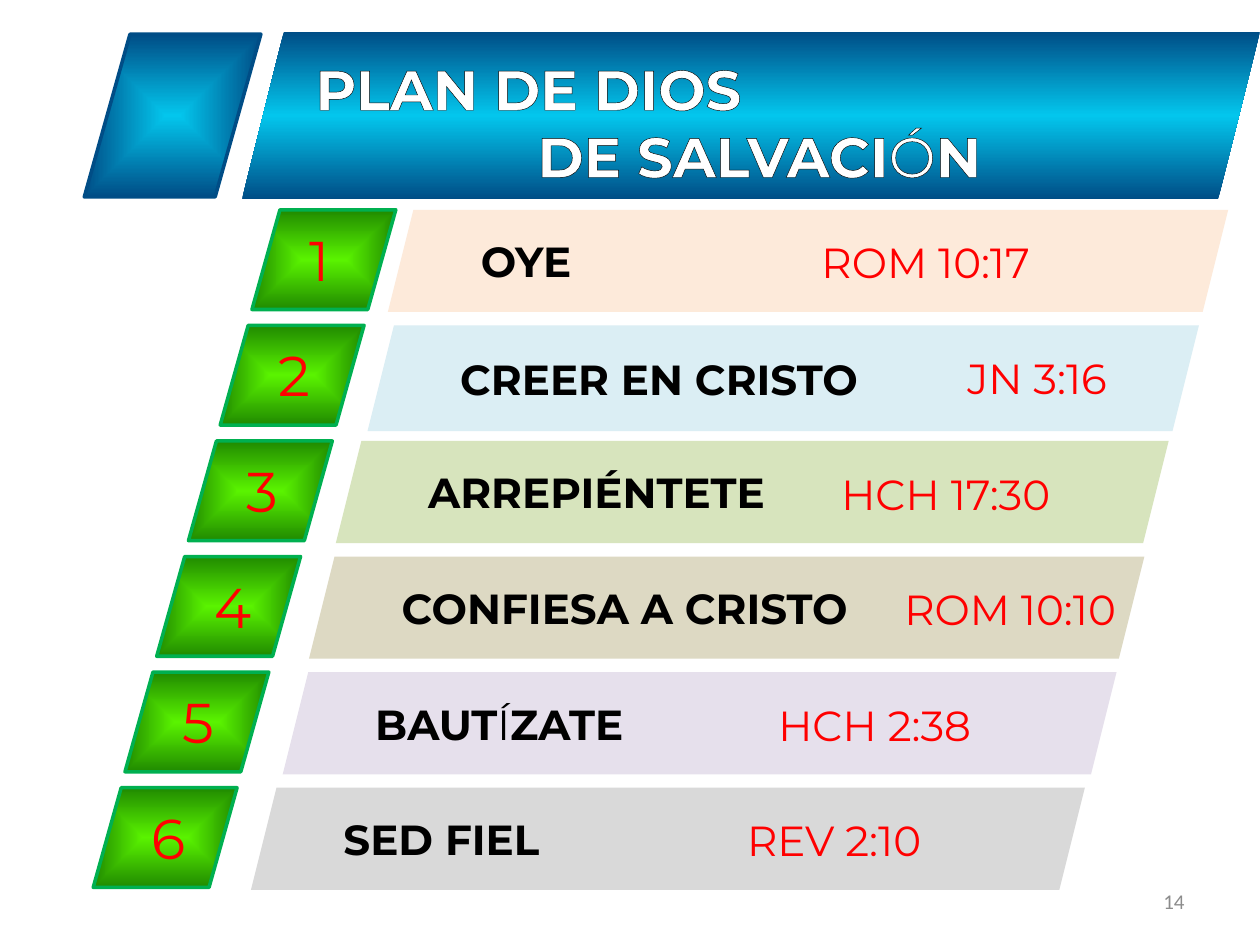
from pptx import Presentation
from pptx.dml.color import RGBColor
from pptx.enum.shapes import MSO_SHAPE
from pptx.enum.text import MSO_ANCHOR, MSO_AUTO_SIZE, PP_ALIGN
from pptx.oxml import parse_xml
from pptx.oxml.ns import nsdecls, qn
from pptx.util import Cm, Pt

PARALLELOGRAM = MSO_SHAPE.PARALLELOGRAM
MIDDLE = MSO_ANCHOR.MIDDLE
GROW = MSO_AUTO_SIZE.SHAPE_TO_FIT_TEXT
LEFT, CENTER, RIGHT = PP_ALIGN.LEFT, PP_ALIGN.CENTER, PP_ALIGN.RIGHT

WHITE = RGBColor(0xFF, 0xFF, 0xFF)
BLACK = RGBColor(0x00, 0x00, 0x00)
RED = RGBColor(0xFF, 0x00, 0x00)
GRAY = RGBColor(0x8C, 0x8C, 0x8C)
SKY = RGBColor(0x03, 0xC6, 0xED)
NAVY = RGBColor(0x00, 0x4D, 0x86)
LIME = RGBColor(0x5A, 0xF3, 0x00)
FOREST = RGBColor(0x20, 0x8A, 0x00)
GREEN = RGBColor(0x00, 0xB0, 0x50)
PEACH = RGBColor(0xFD, 0xEA, 0xDA)
ICE = RGBColor(0xDB, 0xEE, 0xF4)
SAGE = RGBColor(0xD7, 0xE4, 0xBD)
SAND = RGBColor(0xDD, 0xD9, 0xC3)
LILAC = RGBColor(0xE6, 0xE0, 0xEC)
SILVER = RGBColor(0xD9, 0xD9, 0xD9)

FONT = "Montserrat"
CENTER_PATH = ('<a:path path="shape"><a:fillToRect l="50000" t="50000" '
               'r="50000" b="50000"/></a:path>')
VERTICAL = '<a:lin ang="16200000" scaled="0"/>'

# Each step: label spans, bar offset, bar width, bar height, bar colour,
# reference, reference left, reference width.
STEPS = [
    ([("OYE", True)], 2.74, 16.94, 2.06, PEACH, "ROM 10:17", 16.31, 7.19),
    ([("CREER EN CRISTO", True)], 2.97, 16.76, 2.13, ICE, "JN 3:16", 19.25, 4.24),
    ([("ARREPIÉNTETE", True)], 2.97, 16.79, 2.06, SAGE, "HCH 17:30", 16.71, 6.35),
    ([("CONFIESA A CRISTO", True)], 3.07, 16.84, 2.06, SAND, "ROM 10:10", 17.98, 6.35),
    ([("BAUT", True), ("Í", False), ("ZATE", True)], 3.18, 16.81, 2.06, LILAC,
     "HCH 2:38", 15.44, 5.08),
    ([("SED FIEL", True)], 3.18, 16.81, 2.06, SILVER, "REV 2:10", 14.81, 5.28),
]


def write_spans(para, spans, size, color, font=FONT, align=LEFT):
    """Fill a paragraph with (text, bold) spans."""
    para.alignment = align
    for text, bold in spans:
        span = para.add_run()
        span.text = text
        span.font.name = font
        span.font.size = Pt(size)
        span.font.bold = bold
        span.font.color.rgb = color


def add_text(page, left, top, width, height):
    """Add a wrapping text box that grows with its text."""
    box = page.shapes.add_textbox(Cm(left), Cm(top), Cm(width), Cm(height))
    box.text_frame.word_wrap = True
    box.text_frame.auto_size = GROW
    return box


def add_slanted(page, left, top, width, height, fill, line=None):
    """Add a flat parallelogram, outlined if a line colour is given."""
    shape = page.shapes.add_shape(PARALLELOGRAM, Cm(left), Cm(top), Cm(width), Cm(height))
    shape.shadow.inherit = False
    shape.fill.solid()
    shape.fill.fore_color.rgb = fill
    if line is None:
        shape.line.fill.background()
    else:
        shape.line.color.rgb = line
        shape.line.width = Pt(2)
        shape.adjustments[0] = 0.281
    return shape


def set_gradient(shape, colors, direction):
    """Replace the solid fill with evenly spaced gradient stops."""
    last = len(colors) - 1
    stops = "".join(
        f'<a:gs pos="{100000 * i // last}"><a:srgbClr val="{color}"/></a:gs>'
        for i, color in enumerate(colors))
    gradient = parse_xml(f'<a:gradFill {nsdecls("a")} rotWithShape="1">'
                         f'<a:gsLst>{stops}</a:gsLst>{direction}</a:gradFill>')
    properties = shape.element.spPr
    properties.replace(properties.find(qn("a:solidFill")), gradient)


def outline_spans(para):
    """Give every span of the paragraph a thin black outline."""
    for span in para.runs:
        span.font._element.insert(0, parse_xml(
            f'<a:ln {nsdecls("a")} w="9525"><a:solidFill>'
            f'<a:srgbClr val="{BLACK}"/></a:solidFill></a:ln>'))


def add_header(page, left, top):
    """Draw the blue tile, the banner and the two-line title."""
    tile = add_slanted(page, left, top + 0.05, 3.56, 3.28, SKY, NAVY)
    set_gradient(tile, [SKY, NAVY], CENTER_PATH)
    banner = add_slanted(page, left + 3.18, top, 20.52, 3.38, SKY)
    set_gradient(banner, [NAVY, SKY, NAVY], VERTICAL)
    box = add_text(page, left + 3.51, top + 0.33, 20.19, 3.68)
    first = box.text_frame.paragraphs[0]
    second = box.text_frame.add_paragraph()
    write_spans(first, [("PLAN DE DIOS", True)], 32, WHITE)
    first._p.get_or_add_pPr().set("marL", str(Cm(0.9)))
    write_spans(second, [("DE SALVACI", True), ("Ó", False), ("N", True)],
                32, WHITE, align=CENTER)
    for para in (first, second):
        outline_spans(para)


def add_step(page, left, top, number, step):
    """Draw one numbered tile, its bar and its scripture reference."""
    label, offset, width, height, color, reference, reference_left, reference_width = step
    tile = add_slanted(page, left, top, 2.9, 2.01, LIME, GREEN)
    set_gradient(tile, [LIME, FOREST], CENTER_PATH)
    digit = add_text(page, left + 0.92, top + 0.19, 1.09, 1.62)
    write_spans(digit.text_frame.paragraphs[0], [(str(number), False)], 32, RED)
    bar = add_slanted(page, left + offset, top, width, height, color)
    bar.text_frame.vertical_anchor = MIDDLE
    write_spans(bar.text_frame.paragraphs[0], label, 24, BLACK)
    box = add_text(page, reference_left, top + 0.42, reference_width, 1.27)
    write_spans(box.text_frame.paragraphs[0], [(reference, False)], 24, RED)


def add_page_number(page, left, top):
    """Write the page number at the lower right."""
    box = page.shapes.add_textbox(Cm(left), Cm(top), Cm(5.92), Cm(1.02))
    box.text_frame.word_wrap = True
    box.text_frame.vertical_anchor = MIDDLE
    write_spans(box.text_frame.paragraphs[0], [("14", False)], 12, GRAY, "Calibri", RIGHT)


def main():
    """Build the deck and save it."""
    deck = Presentation()
    deck.slide_width, deck.slide_height = Cm(25.4), Cm(19.05)
    page = deck.slides.add_slide(deck.slide_layouts[6])
    add_header(page, 1.7, 0.64)
    for i, step in enumerate(STEPS):
        add_step(page, 5.08 - 0.64 * i, 4.23 + 2.33 * i, i + 1, step)
    add_page_number(page, 18.21, 17.65)
    deck.save("out.pptx")


if __name__ == "__main__":
    main()
